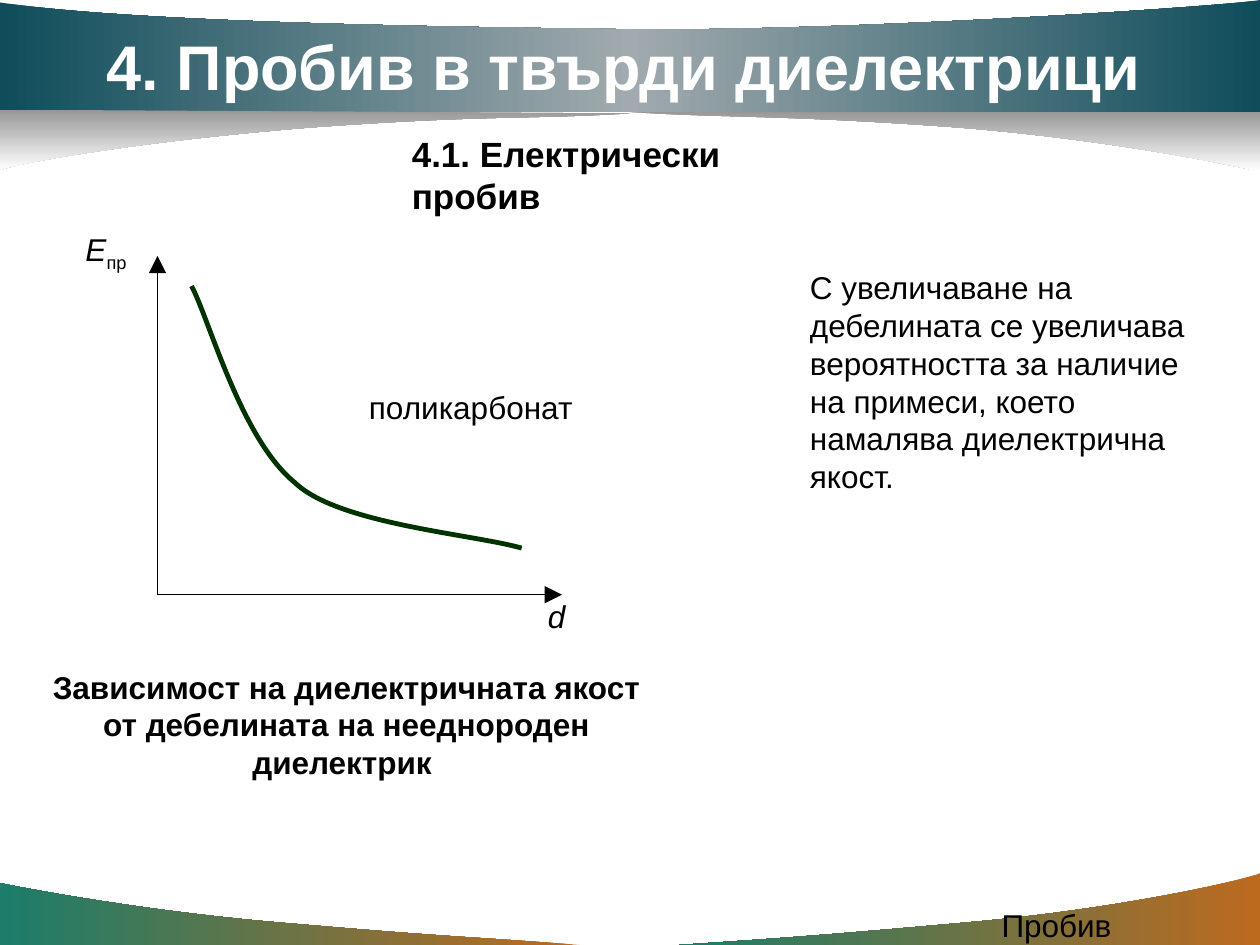
from copy import deepcopy
from dataclasses import dataclass

from lxml import etree
from pptx import Presentation
from pptx.dml.color import RGBColor
from pptx.enum.shapes import MSO_CONNECTOR
from pptx.enum.text import MSO_ANCHOR, PP_ALIGN
from pptx.oxml.ns import qn
from pptx.util import Pt

STRAIGHT = MSO_CONNECTOR.STRAIGHT
TOP, BOTTOM = MSO_ANCHOR.TOP, MSO_ANCHOR.BOTTOM
LEFT, CENTER = PP_ALIGN.LEFT, PP_ALIGN.CENTER
EMU_PER_PX = 9144


@dataclass(frozen=True)
class Theme:
    font: str = "Arial"
    ink: str = "000000"
    title_ink: str = "FFFFFF"
    curve: str = "003300"
    footer: tuple = ("BD6A1F", "1B7D6A")
    banner: tuple = ("0F4D5B", "A1AAAE", "0F4D5B")
    shade: tuple = ("969696", "FFFFFF")
    title: int = 36
    heading: int = 20
    body: int = 18
    axis_width: float = 0.75
    curve_width: float = 2.75


THEME = Theme()


def px(n):
    return n * EMU_PER_PX


def rgb(color):
    return RGBColor.from_string(color)


def add_outline(shapes, start, segments, close=True):
    ends = [segment[-1] for segment in segments]
    builder = shapes.build_freeform(*start, scale=EMU_PER_PX)
    builder.add_line_segments(ends, close=close)
    sp = builder.convert_to_shape()
    sp.shadow.inherit = False
    left, top = (min(values) for values in zip(start, *ends))
    steps = list(sp._element.iter(qn("a:lnTo")))
    for step, (*controls, _) in zip(steps, segments):
        if controls:
            step.tag = qn("a:cubicBezTo")
        for i, (x, y) in enumerate(controls):
            pt = etree.Element(qn("a:pt"), x=str(x - left), y=str(y - top))
            step.insert(i, pt)
    return sp


def paint_gradient(sp, colors, angle):
    sp.line.fill.background()
    fill = sp.fill
    fill.gradient()
    fill.gradient_angle = angle
    stops = sp._element.spPr.find(qn("a:gradFill")).find(qn("a:gsLst"))
    for _ in colors[2:]:
        stops.append(deepcopy(stops[-1]))
    for i, (stop, color) in enumerate(zip(fill.gradient_stops, colors)):
        stop.position = i / (len(colors) - 1)
        stop.color.rgb = rgb(color)


def add_text(shapes, box, runs, size=THEME.body, color=THEME.ink, bold=False,
             align=LEFT, anchor=TOP):
    tf = shapes.add_textbox(*map(px, box)).text_frame
    tf.word_wrap = True
    tf.vertical_anchor = anchor
    p = tf.paragraphs[0]
    p.alignment = align
    for text, italic, baseline in runs:
        r = p.add_run()
        r.text = text
        font = r.font
        font.name = THEME.font
        font.size = Pt(size)
        font.bold = bold
        font.italic = italic
        font.color.rgb = rgb(color)
        if baseline:
            r._r.get_or_add_rPr().set("baseline", str(baseline * 1000))


def plain(text):
    return [(text, False, 0)]


def add_axis(shapes, start, end):
    axis = shapes.add_connector(STRAIGHT, *map(px, (*start, *end)))
    axis.line.color.rgb = rgb(THEME.ink)
    axis.line.width = Pt(THEME.axis_width)
    spPr = axis._element.spPr
    etree.SubElement(spPr.find(qn("a:ln")), qn("a:tailEnd"),
                     type="triangle", w="lg", len="lg")
    etree.SubElement(spPr, qn("a:effectLst"))


def add_background(shapes):
    left_footer = add_outline(shapes, (460, 750), [
        ((384, 744), (358, 744), (232, 733)),
        ((106, 723), (1, 701), (0, 701)),
        ((0, 750),)])
    right_footer = add_outline(shapes, (539, 750), [
        ((614, 745), (646, 743), (769, 732)),
        ((892, 721), (990, 698), (1000, 693)),
        ((1000, 750),)])
    right_shade = add_outline(shapes, (500, 89), [
        ((584, 94), (620, 91), (758, 101)),
        ((897, 112), (998, 136), (1000, 136)),
        ((1000, 88),)])
    banner = add_outline(shapes, (0, 89), [
        ((1000, 89),),
        ((1000, 0),),
        ((964, 6), (653, 26), (487, 23)),
        ((321, 21), (101, 17), (0, 2))])
    left_shade = add_outline(shapes, (500, 90), [
        ((416, 95), (388, 91), (249, 101)),
        ((110, 112), (11, 130), (0, 135)),
        ((0, 87),)])
    for footer in (left_footer, right_footer):
        paint_gradient(footer, THEME.footer, 180)
    for shade in (left_shade, right_shade):
        paint_gradient(shade, THEME.shade, 270)
    paint_gradient(banner, THEME.banner, 180)


def add_graph(shapes):
    origin = (125, 472)
    add_text(shapes, (58, 178, 55, 40), [("E", True, 0), ("пр", False, -25)])
    add_axis(shapes, origin, (446, 472))
    add_axis(shapes, origin, (125, 203))
    add_text(shapes, (425, 469, 34, 40), [("d", True, 0)])
    curve = add_outline(shapes, (152, 227), [
        ((166, 253), (191, 348), (234, 383)),
        ((268, 416), (376, 424), (414, 435))], close=False)
    curve.fill.background()
    curve.line.color.rgb = rgb(THEME.curve)
    curve.line.width = Pt(THEME.curve_width)
    add_text(shapes, (283, 303, 182, 40), plain("поликарбонат"))


def main():
    prs = Presentation()
    prs.slide_width, prs.slide_height = px(1000), px(750)
    shapes = prs.slides.add_slide(prs.slide_layouts[6]).shapes
    add_background(shapes)
    add_text(shapes, (785, 714, 208, 25), plain("Пробив"))
    add_text(shapes, (75, 17, 844, 70), plain("4. Пробив в твърди диелектрици"),
             size=THEME.title, color=THEME.title_ink, bold=True, anchor=BOTTOM)
    add_text(shapes, (317, 100, 370, 43), plain("4.1. Електрически пробив"),
             size=THEME.heading, bold=True)
    add_graph(shapes.add_group_shape().shapes)
    add_text(shapes, (25, 525, 500, 100),
             plain("Зависимост на диелектричната якост от дебелината "
                   "на нееднороден диелектрик "),
             bold=True, align=CENTER)
    add_text(shapes, (633, 208, 320, 190),
             plain("С увеличаване на дебелината се увеличава вероятността "
                   "за наличие на примеси, което намалява диелектрична якост."))
    prs.save("out.pptx")


if __name__ == "__main__":
    main()
